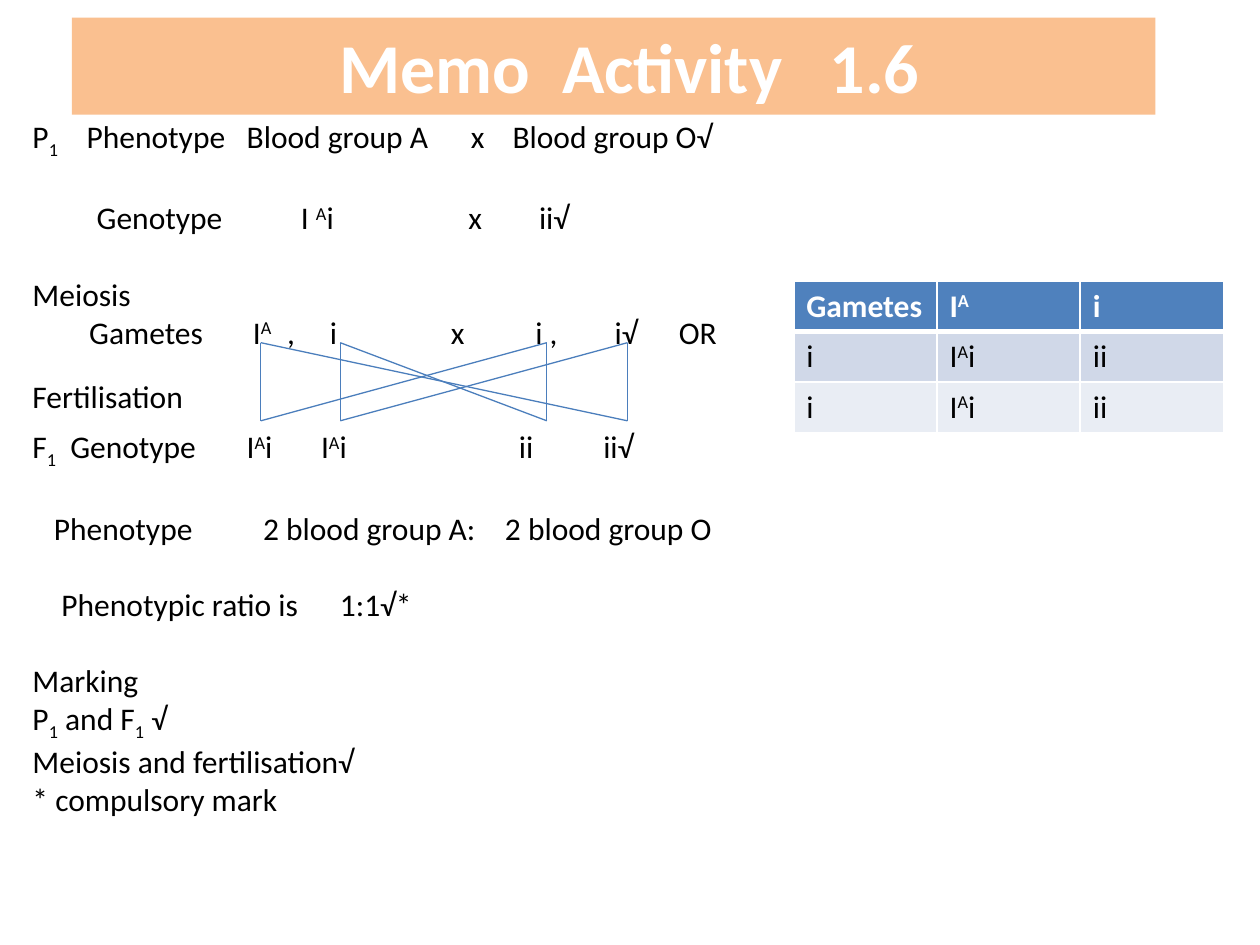
from dataclasses import dataclass

from lxml.etree import SubElement
from pptx import Presentation
from pptx.dml.color import RGBColor
from pptx.enum.shapes import MSO_CONNECTOR, MSO_SHAPE
from pptx.enum.text import MSO_ANCHOR, PP_ALIGN
from pptx.oxml.ns import qn
from pptx.util import Inches, Pt


@dataclass(frozen=True)
class Theme:
    """Colours, font and type sizes of the slide."""
    font: str = "Calibri"
    body_size: int = 18
    title_size: int = 40
    blank_line: int = 22
    ink: str = "000000"
    paper: str = "FFFFFF"
    banner: str = "FAC090"
    line: str = "4B7EBC"
    header: str = "4F81BD"
    bands: tuple = ("D0D8E8", "E9EDF4")


THEME = Theme()
WIDTH, HEIGHT = Inches(10), Inches(7.5)
COLUMNS, ROWS = 100, 75
BASELINES = {"^": "30000", "_": "-25000"}

CROSS_LINES = [
    (0, [(0, "P_1"), (4.3, "Phenotype"), (17, "Blood group A"), (34.8, "x"), (38.1, "Blood group O√")]),
    (1, [(5.1, "Genotype"), (21.3, "I ^Ai"), (34.6, "x"), (40.2, "ii√")]),
    (1, [(0, "Meiosis")]),
    (0, [(4.5, "Gametes"), (17.5, "I^A"), (20.2, ","), (23.6, "i"), (33.2, "x"),
         (39.9, "i ,"), (46.2, "i√"), (51.3, "OR")]),
    (2, [(0, "F_1"), (3, "Genotype"), (17, "I^Ai"), (22.9, "I^Ai"), (38.6, "ii"), (45.3, "ii√")]),
    (1, [(1.7, "Phenotype"), (18.3, "2 blood group A:"), (37.5, "2 blood group O")]),
    (1, [(2.3, "Phenotypic ratio is"), (24.4, "1:1√*")]),
    (1, [(0, "Marking")]),
    (0, [(0, "P_1 and F_1 √")]),
    (0, [(0, "Meiosis and fertilisation√")]),
    (0, [(0, "* compulsory mark")]),
]
GAMETE_COLUMNS = (20.7, 27, 43.4, 49.8)
FERTILISATIONS = [(2, 0), (0, 3), (1, 2), (3, 1), (0, 0), (1, 1), (2, 2), (3, 3)]
PUNNETT_SQUARE = [["Gametes", "I^A", "i"], ["i", "I^Ai", "ii"], ["i", "I^Ai", "ii"]]


def column(count):
    """Return the length of a number of grid columns."""
    return round(WIDTH * count / COLUMNS)


def row(count):
    """Return the length of a number of grid rows."""
    return round(HEIGHT * count / ROWS)


def colour(value):
    """Turn a hex string into a colour."""
    return RGBColor.from_string(value)


def add_run(paragraph, text, size=THEME.body_size, ink=THEME.ink, bold=False):
    """Add one styled run to a paragraph."""
    run = paragraph.add_run()
    run.text = text
    run.font.name, run.font.size, run.font.bold = THEME.font, Pt(size), bold
    run.font.color.rgb = colour(ink)
    return run


def add_genetic_text(paragraph, text, **style):
    """Add runs, raising the letter after ^ and lowering the one after _."""
    plain, baseline = "", None
    for letter in text:
        if letter in BASELINES:
            if plain:
                add_run(paragraph, plain, **style)
            plain, baseline = "", BASELINES[letter]
        elif baseline:
            run = add_run(paragraph, letter, **style)
            run.font._element.set("baseline", baseline)
            baseline = None
        else:
            plain += letter
    if plain:
        add_run(paragraph, plain, **style)


def add_tab_stops(paragraph, positions):
    """Set left tab stops on a paragraph."""
    tab_list = SubElement(paragraph._p.get_or_add_pPr(), qn("a:tabLst"))
    for position in positions:
        SubElement(tab_list, qn("a:tab"), pos=str(column(position)), algn="l")


def add_text(slide, left, top, width, height, lines):
    """Add a text box of tabbed lines, each after some blank-line gaps."""
    frame = slide.shapes.add_textbox(column(left), row(top), column(width), row(height)).text_frame
    frame.word_wrap = True
    for index, (gap, parts) in enumerate(lines):
        paragraph = frame.add_paragraph() if index else frame.paragraphs[0]
        stops = [position for position, _ in parts if position]
        if stops:
            add_tab_stops(paragraph, stops)
        if gap:
            paragraph.space_before = Pt(gap * THEME.blank_line)
        add_genetic_text(paragraph, "".join(("\t" if position else "") + text for position, text in parts))


def add_line(slide, start, end, top, bottom):
    """Add a thin line from a gamete to an offspring."""
    connector = slide.shapes.add_connector(
        MSO_CONNECTOR.STRAIGHT, column(start), row(top), column(end), row(bottom))
    connector.line.color.rgb = colour(THEME.line)
    connector.line.width = Pt(0.75)
    SubElement(connector._element.spPr, qn("a:effectLst"))


def add_cell_borders(cell, bottom):
    """Draw paper-coloured borders round a cell."""
    properties = cell._tc.get_or_add_tcPr()
    for side, width in (("L", 1), ("R", 1), ("T", 1), ("B", bottom)):
        border = SubElement(properties, qn(f"a:ln{side}"), w=str(Pt(width)))
        SubElement(SubElement(border, qn("a:solidFill")), qn("a:srgbClr"), val=THEME.paper)


def add_punnett_square(slide, left, top, width, height):
    """Add the table of gametes and offspring."""
    table = slide.shapes.add_table(
        len(PUNNETT_SQUARE), len(PUNNETT_SQUARE[0]),
        column(left), row(top), column(width), row(height)).table
    for row_index, texts in enumerate(PUNNETT_SQUARE):
        header = row_index == 0
        fill = THEME.header if header else THEME.bands[(row_index - 1) % 2]
        for column_index, text in enumerate(texts):
            cell = table.cell(row_index, column_index)
            add_cell_borders(cell, 3 if header else 1)
            cell.fill.solid()
            cell.fill.fore_color.rgb = colour(fill)
            add_genetic_text(cell.text_frame.paragraphs[0], text,
                             ink=THEME.paper if header else THEME.ink, bold=header)


def add_banner(slide, left, top, width, height, words):
    """Add the title bar, with each word followed by extra tracking."""
    shape = slide.shapes.add_shape(
        MSO_SHAPE.RECTANGLE, column(left), row(top), column(width), row(height))
    shape.shadow.inherit = False
    shape.fill.solid()
    shape.fill.fore_color.rgb = colour(THEME.banner)
    shape.line.fill.background()
    frame = shape.text_frame
    frame.word_wrap = True
    frame.vertical_anchor = MSO_ANCHOR.TOP
    frame.margin_left = column(3.5)
    paragraph = frame.paragraphs[0]
    paragraph.alignment = PP_ALIGN.CENTER
    for word, tracking in words:
        add_run(paragraph, word, THEME.title_size, THEME.paper, True)
        if tracking:
            space = add_run(paragraph, " ", THEME.title_size, THEME.paper, True)
            space.font._element.set("spc", str(tracking * 100))


def main():
    """Build and save the slide."""
    presentation = Presentation()
    presentation.slide_width, presentation.slide_height = WIDTH, HEIGHT
    slide = presentation.slides.add_slide(presentation.slide_layouts[6])
    add_text(slide, 1.6, 8.8, 98.4, 66, CROSS_LINES)
    for parent, child in FERTILISATIONS:
        add_line(slide, GAMETE_COLUMNS[parent], GAMETE_COLUMNS[child], 27.2, 33.4)
    add_punnett_square(slide, 63, 22.3, 34.1, 12)
    add_banner(slide, 5.7, 1.4, 86, 7.7, [("Memo", 9), ("Activity", 18), ("1.6", 0)])
    add_text(slide, 1.6, 29.4, 15.3, 4, [(0, [(0, "Fertilisation")])])
    presentation.save("out.pptx")


if __name__ == "__main__":
    main()
